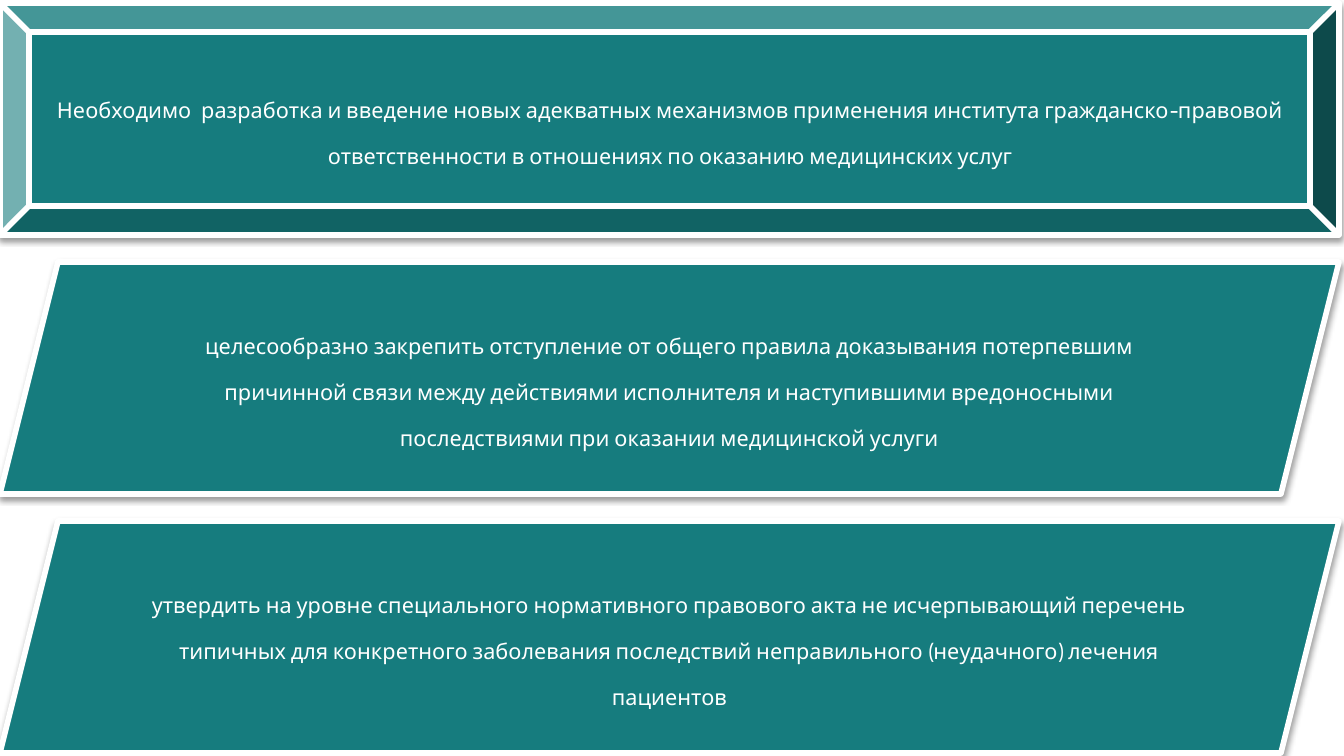
import pptx
import pptx.util
import pptx.dml.color
import pptx.enum.shapes
import pptx.enum.text
import pptx.oxml
import pptx.oxml.ns
from dataclasses import dataclass


@dataclass(frozen=True)
class Theme:
    panel: str = "167C7E"
    light: str = "FFFFFF"
    shadow: str = "000000"
    font: str = "Cabin"
    text_size: int = 20
    line_width: int = 3


THEME = Theme()
EMU_PER_PX = 914400 / 134.4
SHAPE = pptx.enum.shapes.MSO_SHAPE


def px(*lengths):
    """Turn px lengths into EMU."""
    return [pptx.util.Emu(round(n * EMU_PER_PX)) for n in lengths]


def rgb(value):
    return pptx.dml.color.RGBColor.from_string(value)


prs = pptx.Presentation()
prs.slide_width, prs.slide_height = px(1344, 756)
s = prs.slides.add_slide(prs.slide_layouts[6])

PANEL_TOP, PANEL_STEP = 3, 259
PANEL_WIDTH, PANEL_HEIGHT = 1339, 232
TEXT_INSET = 11

# preset, text box left, width and height, wording
panels = [
    (SHAPE.BEVEL, 30, 1281, 175,
     "Необходимо  разработка и введение новых адекватных механизмов применения "
     "института гражданско-правовой ответственности в отношениях по оказанию "
     "медицинских услуг"),
    (SHAPE.PARALLELOGRAM, 136, 1067, 185,
     "целесообразно закрепить отступление от общего правила доказывания "
     "потерпевшим причинной связи между действиями исполнителя и наступившими "
     "вредоносными последствиями при оказании медицинской услуги"),
    (SHAPE.PARALLELOGRAM, 136, 1067, 185,
     "утвердить на уровне специального нормативного правового акта не "
     "исчерпывающий перечень типичных для конкретного заболевания последствий "
     "неправильного (неудачного) лечения пациентов"),
]

for i, (preset, left, width, height, wording) in enumerate(panels):
    top = PANEL_TOP + i * PANEL_STEP
    sp = s.shapes.add_shape(preset, *px(0, top, PANEL_WIDTH, PANEL_HEIGHT))
    sp.fill.solid()
    sp.fill.fore_color.rgb = rgb(THEME.panel)
    sp.line.color.rgb = rgb(THEME.light)
    sp.line.width = pptx.util.Pt(THEME.line_width)
    sp.shadow.inherit = False
    effects = sp._element.spPr.find(pptx.oxml.ns.qn("a:effectLst"))
    effects.append(pptx.oxml.parse_xml(
        f'<a:outerShdw {pptx.oxml.ns.nsdecls("a")} blurRad="39370" dist="20320" '
        f'dir="5400000" rotWithShape="0"><a:srgbClr val="{THEME.shadow}">'
        '<a:alpha val="38000"/></a:srgbClr></a:outerShdw>'))

    text_top = top + (PANEL_HEIGHT - height) // 2
    tf = s.shapes.add_textbox(*px(left, text_top, width, height)).text_frame
    tf.word_wrap = True
    tf.vertical_anchor = pptx.enum.text.MSO_ANCHOR.MIDDLE
    (tf.margin_left, tf.margin_top,
     tf.margin_right, tf.margin_bottom) = px(*[TEXT_INSET] * 4)
    tf.text = wording
    p = tf.paragraphs[0]
    p.alignment = pptx.enum.text.PP_ALIGN.CENTER
    p.line_spacing = 0.9
    p.space_after = pptx.util.Pt(THEME.text_size * 0.35)
    r = p.runs[0]
    r.font.name = THEME.font
    r.font.size = pptx.util.Pt(THEME.text_size)
    r.font.color.rgb = rgb(THEME.light)
    r.font._element.set("baseline", "-25000")

prs.save("out.pptx")
